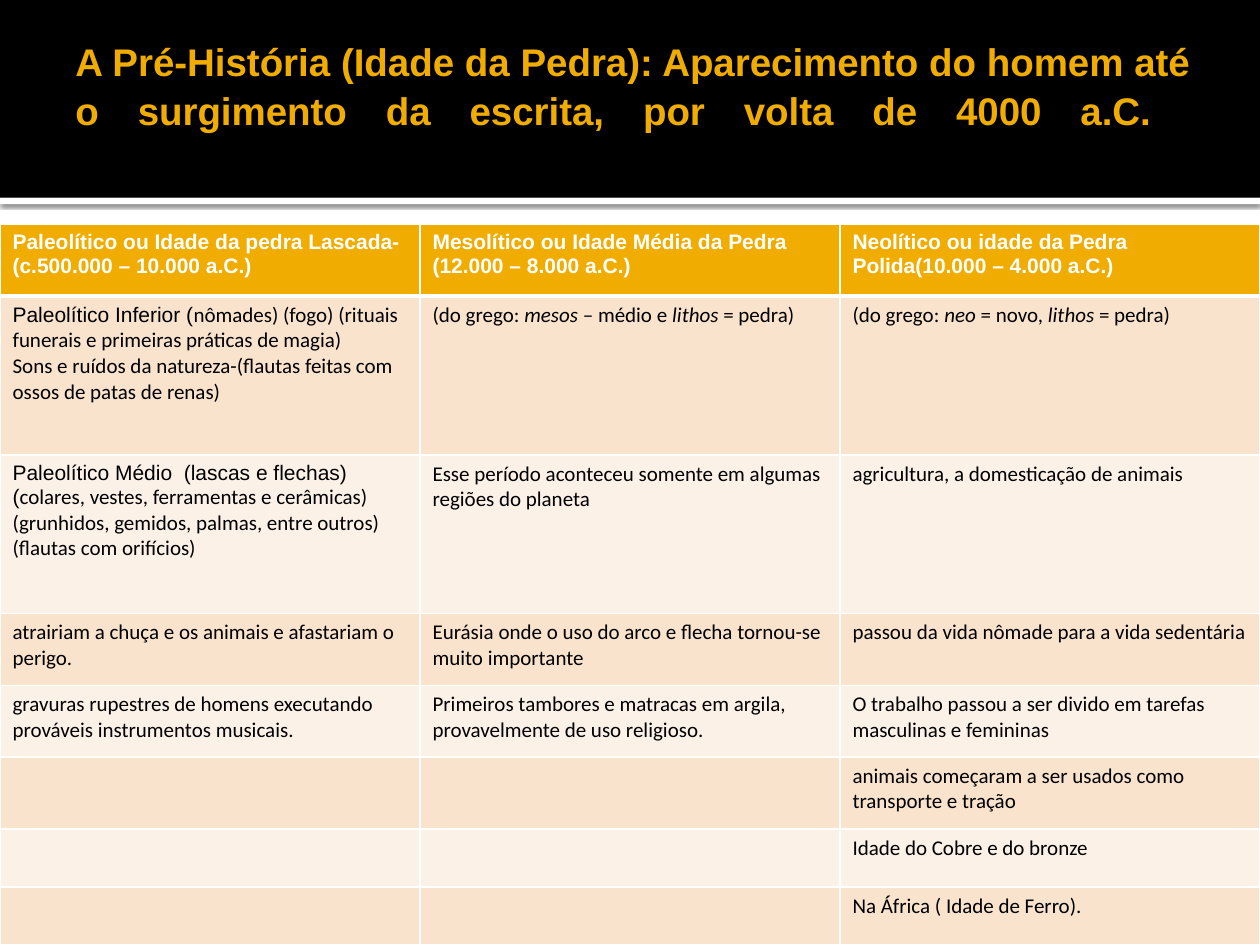
from dataclasses import dataclass

from lxml.etree import SubElement
from pptx import Presentation
from pptx.dml.color import RGBColor
from pptx.enum.shapes import MSO_SHAPE
from pptx.enum.text import MSO_ANCHOR, PP_ALIGN
from pptx.oxml.ns import qn
from pptx.util import Inches, Pt

WHITE, BLACK, GOLD = "FFFFFF", "000000", "F0AD00"
BAND_FILLS = ("FCF1E7", "F9E3CC")
ROW_HEIGHTS = (0.57, 1.26, 1.26, 0.57, 0.57, 0.57, 0.46, 0.46)
COLUMN_COUNT = 3


@dataclass(frozen=True)
class Run:
    text: str
    font: str = "Calibri"
    size: float = 12
    color: str = BLACK
    bold: bool = False
    italic: bool = False


@dataclass(frozen=True)
class Band:
    top: float
    height: float
    fill: str


def rgb(value: str) -> RGBColor:
    return RGBColor.from_string(value)


def heading(text: str) -> list:
    return [[Run(text, "Arial", color=WHITE, bold=True)]]


def plain(*texts: str) -> list:
    return [[Run(text)] for text in texts]


def italic(text: str) -> Run:
    return Run(text, italic=True)


def add_run(paragraph, content: Run) -> None:
    run = paragraph.add_run()
    run.text = content.text
    run.font.name = content.font
    run.font.size = Pt(content.size)
    run.font.bold = content.bold
    run.font.italic = content.italic
    run.font.color.rgb = rgb(content.color)


def add_band(slide, band: Band):
    shape = slide.shapes.add_shape(
        MSO_SHAPE.RECTANGLE, 0, Inches(band.top), Inches(10), Inches(band.height)
    )
    shape.shadow.inherit = False
    shape.fill.solid()
    shape.fill.fore_color.rgb = rgb(band.fill)
    shape.line.fill.background()
    return shape


def add_shadow(shape) -> None:
    effects = shape._element.spPr.find(qn("a:effectLst"))
    shadow = SubElement(
        effects, qn("a:outerShdw"), blurRad=str(Pt(2.5)), dist=str(Pt(0.8)),
        dir="5400000", algn="tl", rotWithShape="0",
    )
    color = SubElement(shadow, qn("a:srgbClr"), val=BLACK)
    SubElement(color, qn("a:alpha"), val="60000")


def add_title(slide, content: Run) -> None:
    shape = slide.shapes.add_textbox(Inches(0.5), Inches(0.17), Inches(9), Inches(1.37))
    frame = shape.text_frame
    frame.word_wrap = True
    frame.vertical_anchor = MSO_ANCHOR.MIDDLE
    frame.margin_right = Inches(0.05)
    paragraph = frame.paragraphs[0]
    paragraph.alignment = PP_ALIGN.JUSTIFY
    paragraph.line_spacing = 1.06
    add_run(paragraph, content)
    paragraph.add_line_break()
    SubElement(paragraph._p, qn("a:endParaRPr"), sz=str(int(content.size * 100)))


def set_borders(cell, top: float, bottom: float) -> None:
    properties = cell._tc.get_or_add_tcPr()
    for side, width in (("L", 1), ("R", 1), ("T", top), ("B", bottom)):
        line = SubElement(properties, qn(f"a:ln{side}"), w=str(Pt(width)))
        fill = SubElement(line, qn("a:solidFill"))
        SubElement(fill, qn("a:srgbClr"), val=WHITE)


def fill_cell(cell, paragraphs: list, fill: str) -> None:
    cell.fill.solid()
    cell.fill.fore_color.rgb = rgb(fill)
    for index, runs in enumerate(paragraphs):
        frame = cell.text_frame
        paragraph = frame.add_paragraph() if index else frame.paragraphs[0]
        for content in runs:
            add_run(paragraph, content)


def add_period_table(slide, rows: list) -> None:
    table = slide.shapes.add_table(
        len(rows), COLUMN_COUNT, 0, Inches(1.78), Inches(10), Inches(sum(ROW_HEIGHTS))
    ).table
    table.first_row = False
    table.horz_banding = False
    for column in table.columns:
        column.width = Inches(10 / COLUMN_COUNT)
    for row_index, row in enumerate(rows):
        table.rows[row_index].height = Inches(ROW_HEIGHTS[row_index])
        fill = BAND_FILLS[row_index % 2] if row_index else GOLD
        for column_index, paragraphs in enumerate(row):
            cell = table.cell(row_index, column_index)
            set_borders(cell, 3 if row_index == 1 else 1, 1 if row_index else 3)
            fill_cell(cell, paragraphs, fill)


TITLE = Run(
    "A Pré-História (Idade da Pedra): Aparecimento do homem até o surgimento "
    "da escrita, por volta de 4000 a.C. ",
    "Arial", 22, GOLD, bold=True,
)

PERIODS = [
    [
        heading("Paleolítico ou Idade da pedra Lascada-(c.500.000 – 10.000 a.C.)"),
        heading("Mesolítico ou Idade Média da Pedra (12.000 – 8.000 a.C.)"),
        heading("Neolítico ou idade da Pedra Polida(10.000 – 4.000 a.C.)"),
    ],
    [
        [
            [
                Run("Paleolítico Inferior (", "Arial"),
                Run("nômades) (fogo) (rituais funerais e primeiras práticas de magia)"),
            ],
            *plain("Sons e ruídos da natureza-(flautas feitas com ossos de patas de renas)"),
        ],
        [[Run("(do grego: "), italic("mesos"), Run(" – médio e "), italic("lithos"), Run(" = pedra)")]],
        [[Run("(do grego: "), italic("neo "), Run("= novo, "), italic("lithos"), Run(" = pedra)")]],
    ],
    [
        [
            [
                Run("Paleolítico Médio  (lascas e flechas) (", "Arial"),
                Run("colares, vestes, ferramentas e cerâmicas)"),
            ],
            *plain("(grunhidos, gemidos, palmas, entre outros)", "(flautas com orifícios)"),
        ],
        plain("Esse período aconteceu somente em algumas regiões do planeta"),
        plain("agricultura, a domesticação de animais"),
    ],
    [
        plain("atrairiam a chuça e os animais e afastariam o perigo."),
        plain("Eurásia onde o uso do arco e flecha tornou-se muito importante"),
        plain("passou da vida nômade para a vida sedentária"),
    ],
    [
        plain("gravuras rupestres de homens executando prováveis instrumentos musicais."),
        plain("Primeiros tambores e matracas em argila, provavelmente de uso religioso."),
        plain("O trabalho passou a ser divido em tarefas masculinas e femininas"),
    ],
    [[], [], plain("animais começaram a ser usados como transporte e tração")],
    [[], [], plain("Idade do Cobre e do bronze")],
    [[], [], plain("Na África ( Idade de Ferro).")],
]


def main() -> None:
    presentation = Presentation()
    presentation.slide_width = Inches(10)
    presentation.slide_height = Inches(7.5)
    slide = presentation.slides.add_slide(presentation.slide_layouts[6])
    slide.background.fill.solid()
    slide.background.fill.fore_color.rgb = rgb(WHITE)
    add_shadow(add_band(slide, Band(1.57, 0.05, WHITE)))
    add_band(slide, Band(0, 1.57, BLACK))
    add_title(slide, TITLE)
    add_period_table(slide, PERIODS)
    presentation.save("out.pptx")


if __name__ == "__main__":
    main()
